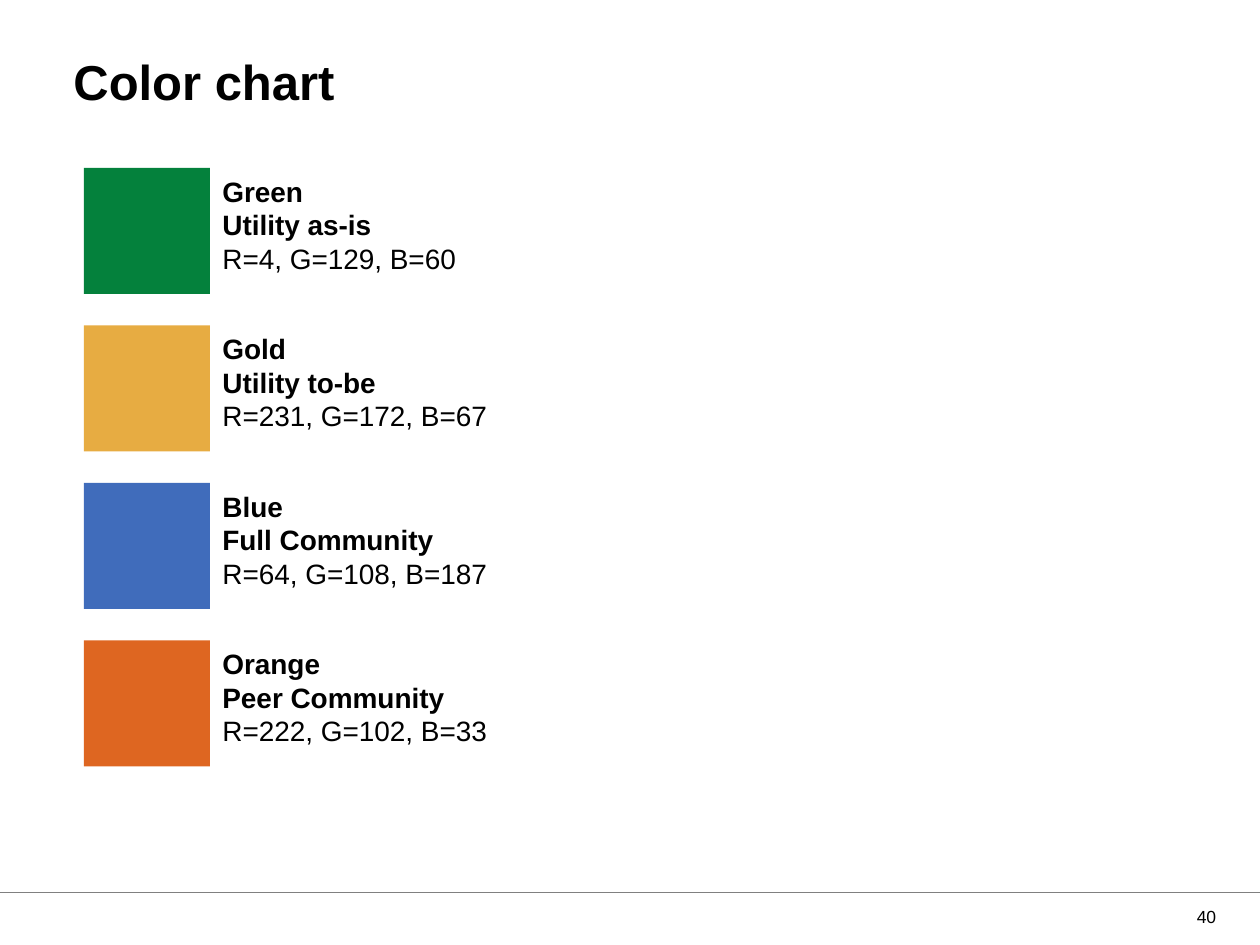
import copy

import pptx
import pptx.dml.color
import pptx.enum.shapes
import pptx.enum.text
import pptx.oxml.ns
import pptx.util
from lxml import etree

WIDTH, HEIGHT = pptx.util.Inches(10), pptx.util.Inches(7.5)
COLUMN, ROW = WIDTH // 120, HEIGHT // 90  # grid cells of 1/12 inch
FONT = "Arial"
COLORS = {
    "text": "000000",
    "rule": "808080",
    "Green": "04813C",
    "Gold": "E7AC42",
    "Blue": "406CBB",
    "Orange": "DE6621",
}
SWATCHES = [
    ("Green", "Utility as-is", "R=4, G=129, B=60"),
    ("Gold", "Utility to-be", "R=231, G=172, B=67"),
    ("Blue", "Full Community", "R=64, G=108, B=187"),
    ("Orange", "Peer Community", "R=222, G=102, B=33"),
]


def rgb(name):
    return pptx.dml.color.RGBColor.from_string(COLORS[name])


def add_run(paragraph, text, size, bold=False):
    run = paragraph.add_run()
    run.text = text
    run.font.name = FONT
    run.font.size = pptx.util.Pt(size)
    run.font.bold = bold
    run.font.color.rgb = rgb("text")
    return run


def break_line(paragraph, run):
    """Break the line after run, at the run's own text size."""
    paragraph.add_line_break()
    line_break = paragraph._p.findall(pptx.oxml.ns.qn("a:br"))[-1]
    line_break.append(copy.deepcopy(run.font._element))


def add_title(slide, left, top, width, height):
    frame = slide.shapes.add_textbox(left, top, width, height).text_frame
    frame.word_wrap = True
    frame.margin_left = frame.margin_right = 0
    frame.margin_top = frame.margin_bottom = 0
    paragraph = frame.paragraphs[0]
    paragraph.line_spacing = 0.9
    add_run(paragraph, "Color chart", 28, bold=True)


def add_swatch(slide, left, top, side, name, role, values):
    """Place a colour square with its three-line label to the right."""
    square = slide.shapes.add_shape(
        pptx.enum.shapes.MSO_SHAPE.RECTANGLE, left, top, side, side)
    square.shadow.inherit = False
    square.fill.solid()
    square.fill.fore_color.rgb = rgb(name)
    square.line.fill.background()

    label = slide.shapes.add_textbox(left + side, top, 28 * COLUMN, 11 * ROW)
    label.text_frame.word_wrap = False
    paragraph = label.text_frame.paragraphs[0]
    for heading in (name, role):
        break_line(paragraph, add_run(paragraph, heading, 16, bold=True))
    add_run(paragraph, values, 16)


def add_color_chart(slide, left, top, side, pitch):
    for index, swatch in enumerate(SWATCHES):
        add_swatch(slide, left, top + index * pitch, side, *swatch)


def add_footer(slide, left, top, width, height):
    rule = slide.shapes.add_connector(
        pptx.enum.shapes.MSO_CONNECTOR.STRAIGHT, left, top, left + width, top)
    rule.line.color.rgb = rgb("rule")
    rule.line.width = pptx.util.Pt(1)
    etree.SubElement(rule._element.spPr, pptx.oxml.ns.qn("a:effectLst"))

    number_width = 14 * COLUMN
    number = slide.shapes.add_textbox(
        left + width - 3 * COLUMN - number_width, top + ROW // 2,
        number_width, height - 3 * ROW // 2)
    frame = number.text_frame
    frame.word_wrap = True
    frame.vertical_anchor = pptx.enum.text.MSO_ANCHOR.MIDDLE
    paragraph = frame.paragraphs[0]
    paragraph.alignment = pptx.enum.text.PP_ALIGN.RIGHT
    add_run(paragraph, "40", 10)


def main():
    presentation = pptx.Presentation()
    presentation.slide_width, presentation.slide_height = WIDTH, HEIGHT
    slide = presentation.slides.add_slide(presentation.slide_layouts[6])
    add_footer(slide, 0, 85 * ROW, WIDTH, 5 * ROW)
    add_title(slide, 7 * COLUMN, 5.5 * ROW, 107 * COLUMN, 5 * ROW)
    add_color_chart(slide, 8 * COLUMN, 16 * ROW, 12 * COLUMN, 15 * ROW)
    presentation.save("out.pptx")


if __name__ == "__main__":
    main()
